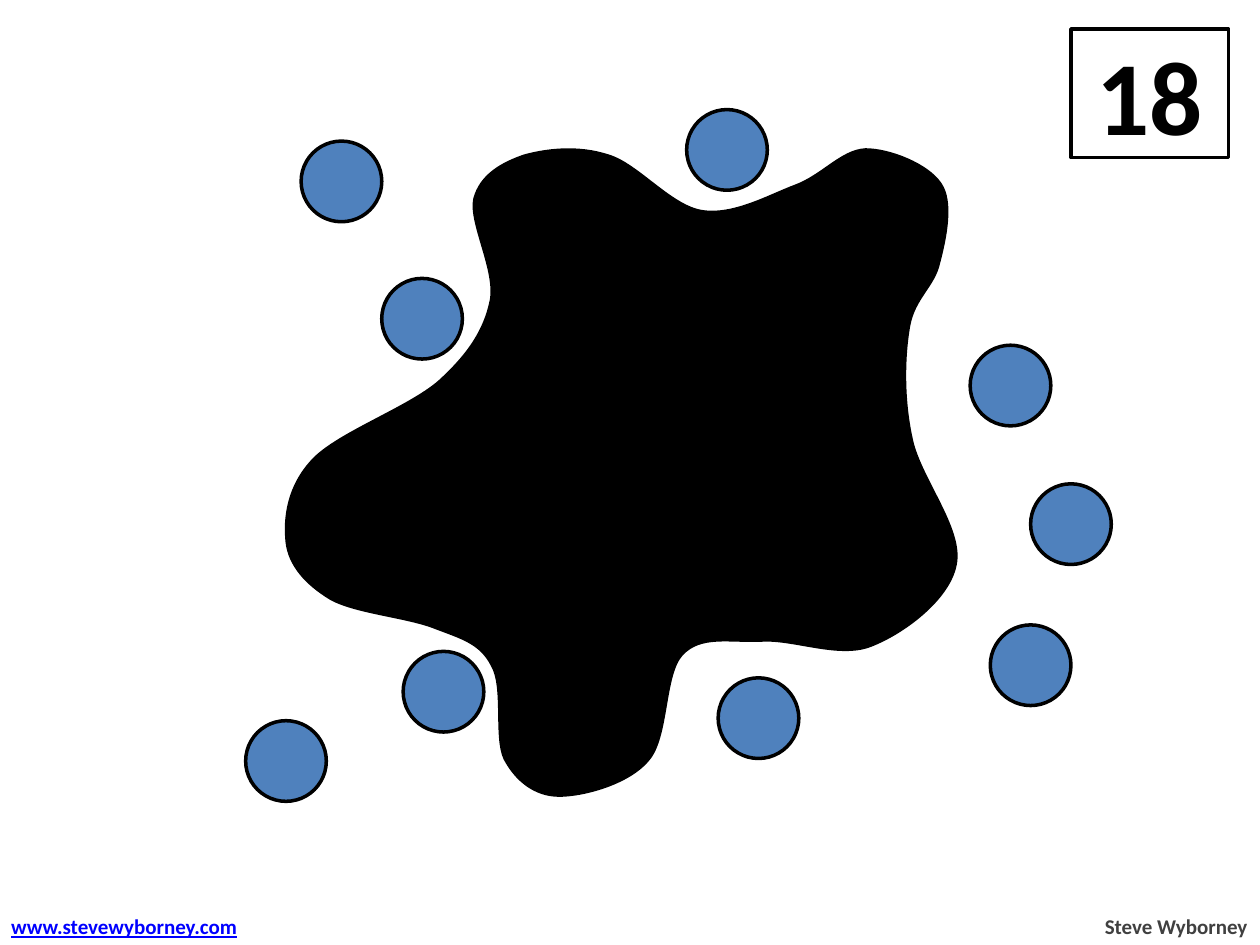
from lxml import etree
from pptx import Presentation
from pptx.dml.color import RGBColor
from pptx.enum.shapes import MSO_SHAPE
from pptx.enum.text import MSO_ANCHOR, PP_ALIGN
from pptx.oxml.ns import qn
from pptx.util import Emu, Pt

RECT, OVAL = MSO_SHAPE.RECTANGLE, MSO_SHAPE.OVAL
LEFT, MID, RIGHT = PP_ALIGN.LEFT, PP_ALIGN.CENTER, PP_ALIGN.RIGHT
CENTER = MSO_ANCHOR.MIDDLE

SCALE = 9144  # EMU in one px, 100 px to the inch
COLORS = {"ink": "000000", "paper": "FFFFFF", "dot": "4F81BD",
          "link": "0000FF", "gray": "404040"}
FONT = "Calibri"

DOT = 64
DOTS = [(239, 112), (303, 221), (545, 87), (320, 517), (195, 572),
        (570, 538), (770, 274), (818, 384), (786, 496)]

# Outline of the splat: a start point, then two handles and an end per curve
START = (263, 475)
CURVES = [
    (243, 463, 230, 448, 228, 430), (226, 411, 229, 386, 249, 365),
    (269, 344, 325, 324, 349, 303), (372, 282, 385, 263, 390, 239),
    (395, 215, 373, 177, 377, 158), (382, 139, 399, 130, 416, 124),
    (434, 119, 459, 116, 483, 124), (506, 131, 532, 164, 557, 168),
    (582, 172, 610, 156, 631, 148), (653, 140, 668, 120, 687, 119),
    (706, 119, 736, 131, 746, 146), (756, 160, 750, 189, 745, 208),
    (741, 227, 725, 236, 721, 259), (717, 282, 716, 316, 723, 348),
    (729, 379, 764, 420, 758, 448), (753, 475, 717, 502, 691, 512),
    (666, 522, 629, 506, 604, 508), (579, 509, 556, 503, 541, 519),
    (526, 535, 530, 585, 514, 603), (498, 622, 462, 631, 444, 631),
    (425, 631, 410, 619, 401, 602), (393, 585, 401, 545, 391, 528),
    (382, 510, 367, 506, 346, 498), (324, 489, 283, 486, 263, 475),
]


def px(n):
    return Emu(n * SCALE)


def color(name):
    return RGBColor.from_string(COLORS[name])


def paint(shape, fill):
    shape.shadow.inherit = False
    shape.fill.solid()
    shape.fill.fore_color.rgb = color(fill)
    shape.line.color.rgb = color("ink")
    shape.line.width = Pt(2)


def add_shape(slide, kind, box, fill):
    shape = slide.shapes.add_shape(kind, *map(px, box))
    paint(shape, fill)
    return shape


def add_splat(slide, start, curves, fill):
    ends = [c[4:] for c in curves]
    form = slide.shapes.build_freeform(*start, scale=SCALE)
    form.add_line_segments(ends, close=True)
    shape = form.convert_to_shape()
    paint(shape, fill)
    # Bend each straight side into its curve
    left = min(x for x, y in ends)
    top = min(y for x, y in ends)
    sides = list(shape._element.iter(qn("a:lnTo")))
    for side, curve in zip(sides, curves):
        bend = etree.Element(qn("a:cubicBezTo"))
        for x, y in zip(curve[::2], curve[1::2]):
            etree.SubElement(bend, qn("a:pt"), x=str(x - left), y=str(y - top))
        side.getparent().replace(side, bend)


def write(shape, text, size=12, tone="gray", align=LEFT, line=False):
    para = shape.text_frame.paragraphs[0]
    para.alignment = align
    run = para.add_run()
    run.text = text
    font = run.font
    font.name, font.size, font.bold = FONT, Pt(size), True
    font.underline = line
    font.color.rgb = color(tone)


def add_note(slide, box, text, **style):
    note = slide.shapes.add_textbox(*map(px, box))
    note.text_frame.word_wrap = False
    write(note, text, **style)


def main():
    deck = Presentation()
    deck.slide_width, deck.slide_height = px(1000), px(750)
    slide = deck.slides.add_slide(deck.slide_layouts[6])

    # Total
    total = add_shape(slide, RECT, (850, 23, 125, 102), "paper")
    total.text_frame.vertical_anchor = CENTER
    write(total, "18", size=60, tone="ink", align=MID)

    # Dots and splat
    for x, y in DOTS:
        add_shape(slide, OVAL, (x, y, DOT, DOT), "dot")
    add_splat(slide, START, CURVES, "ink")

    # Footer
    add_note(slide, (866, 720, 134, 30), "Steve Wyborney", align=RIGHT)
    add_note(slide, (-1, 720, 205, 30), "www.stevewyborney.com",
             tone="link", line=True)

    deck.save("out.pptx")


if __name__ == "__main__":
    main()
